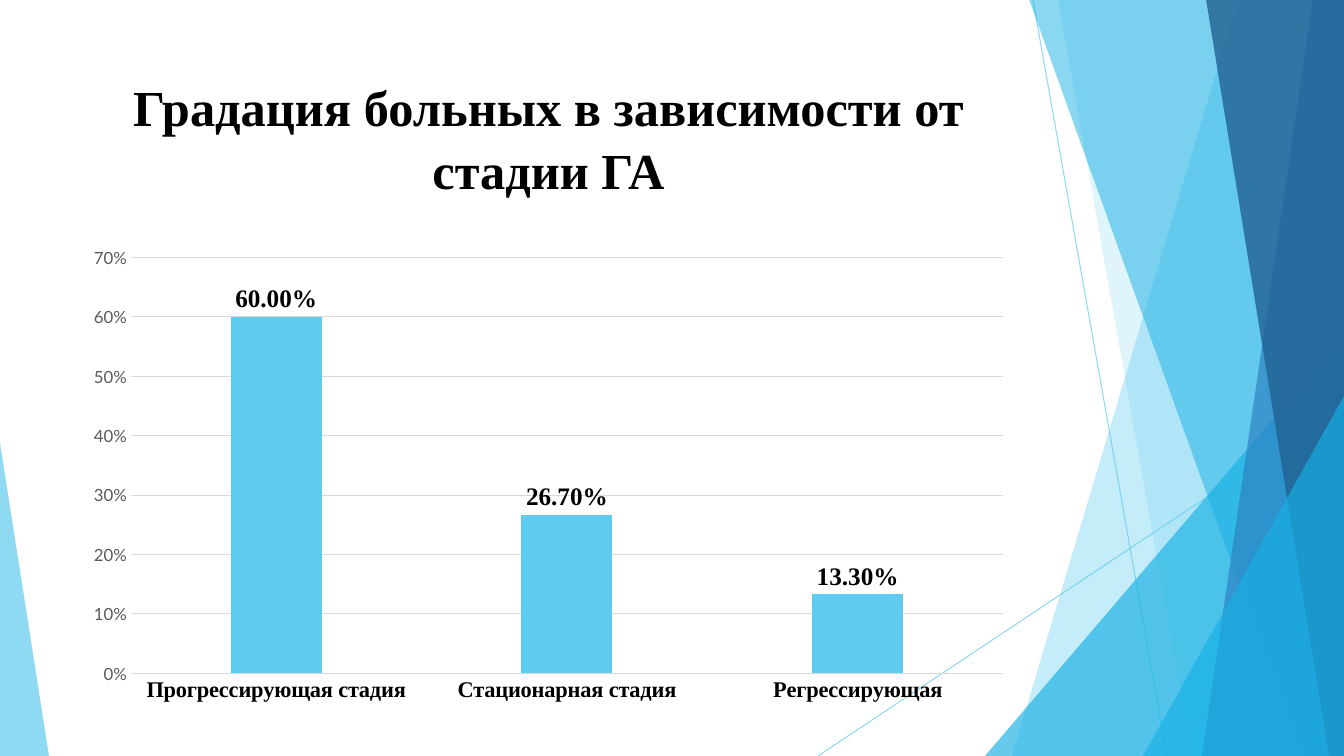
import pptx
import pptx.chart.data
import pptx.dml.color
import pptx.enum.chart
import pptx.enum.shapes
import pptx.enum.text
import pptx.oxml
import pptx.oxml.ns
import pptx.util

SLIDE = (1344, 756)
SCALE = 914400 / 100.8
SERIF, SANS = "Times New Roman", "Lato"
COLORS = {
    "sky": "5FCBEF", "azure": "17B0E4", "blue": "2E83C3", "navy": "226292",
    "black": "000000", "gray": "595959", "grid": "D9D9D9",
}

TITLE = "Градация больных в зависимости от стадии ГА"
TITLE_BOX = (75, 68, 947, 145)
CHART_BOX = (75, 238, 947, 474)
STAGES = {
    "Прогрессирующая стадия": 0.6,
    "Стационарная стадия": 0.267,
    "Регрессирующая": 0.133,
}

# From back to front; opacity in percent
RAYS = [((1033, 0), (1167, 756)), ((1344, 406), (818, 756))]
# Bands run to the right edge: top left x, bottom left x, colour, opacity
# Triangles: left, top, width, apex position, colour, opacity
DECOR = [
    ("band", 1238, 1012, "sky", 36),
    ("band", 1058, 1192, "sky", 20),
    ("triangle", 985, 336, 359, 1, "azure", 66),
    ("band", 1029, 1301, "azure", 50),
    ("band", 1313, 1202, "blue", 70),
    ("band", 1206, 1329, "navy", 80),
    ("triangle", 1143, 396, 201, 1, "azure", 66),
    ("triangle", 0, 443, 49, 0, "sky", 70),
]


def px(*lengths):
    return [pptx.util.Emu(round(length * SCALE)) for length in lengths]


def rgb(name):
    return pptx.dml.color.RGBColor.from_string(COLORS[name])


def set_opacity(shape, percent):
    for color in shape.element.iter(pptx.oxml.ns.qn("a:srgbClr")):
        pptx.oxml.ns.qn("a:alpha")
        alpha = color.makeelement(pptx.oxml.ns.qn("a:alpha"), {"val": str(percent * 1000)})
        color.append(alpha)


def paint(shape, color, opacity):
    shape.shadow.inherit = False
    shape.line.fill.background()
    shape.fill.solid()
    shape.fill.fore_color.rgb = rgb(color)
    set_opacity(shape, opacity)


def add_ray(page, start, end):
    ray = page.shapes.add_connector(
        pptx.enum.shapes.MSO_CONNECTOR.STRAIGHT, *px(*start, *end))
    ray.line.color.rgb = rgb("sky")
    ray.line.width = pptx.util.Pt(0.75)
    set_opacity(ray, 70)
    ray.element.spPr.append(
        ray.element.makeelement(pptx.oxml.ns.qn("a:effectLst"), {}))


def add_band(page, top_x, bottom_x, color, opacity):
    right, bottom = SLIDE
    builder = page.shapes.build_freeform(top_x, -1, scale=SCALE)
    builder.add_line_segments([(right, -1), (right, bottom), (bottom_x, bottom)])
    paint(builder.convert_to_shape(), color, opacity)


def add_triangle(page, left, top, width, apex, color, opacity):
    triangle = page.shapes.add_shape(
        pptx.enum.shapes.MSO_SHAPE.ISOSCELES_TRIANGLE,
        *px(left, top, width, SLIDE[1] - top))
    triangle.adjustments[0] = apex
    paint(triangle, color, opacity)


def style_font(font, size, color="black", bold=False, name=SERIF):
    font.size = pptx.util.Pt(size)
    font.bold = bold
    font.name = name
    font.color.rgb = rgb(color)


def add_text(page, text, place, size, spacing=1.0, **style):
    box = page.shapes.add_textbox(*px(*place))
    frame = box.text_frame
    frame.word_wrap = True
    frame.vertical_anchor = pptx.enum.text.MSO_ANCHOR.TOP
    para = frame.paragraphs[0]
    para.alignment = pptx.enum.text.PP_ALIGN.CENTER
    para.line_spacing = spacing
    span = para.add_run()
    span.text = text
    style_font(span.font, size, **style)


def add_stage_chart(page):
    data = pptx.chart.data.CategoryChartData(number_format="0.00%")
    data.categories = list(STAGES)
    data.add_series("Series 1", list(STAGES.values()))
    chart = page.shapes.add_chart(
        pptx.enum.chart.XL_CHART_TYPE.COLUMN_CLUSTERED, *px(*CHART_BOX), data).chart
    chart.has_legend = False
    chart.has_title = False
    style_font(chart.font, 10, name=SANS)

    plot = chart.plots[0]
    plot.vary_by_categories = False
    plot.gap_width = 219
    plot.overlap = -27
    columns = plot.series[0].format.fill
    columns.solid()
    columns.fore_color.rgb = rgb("sky")

    plot.has_data_labels = True
    labels = plot.data_labels
    labels.show_value = True
    labels.number_format = "0.00%"
    labels.number_format_is_linked = False
    labels.position = pptx.enum.chart.XL_LABEL_POSITION.OUTSIDE_END
    style_font(labels.font, 18, bold=True)

    stages, shares = chart.category_axis, chart.value_axis
    for axis in (stages, shares):
        axis.major_tick_mark = pptx.enum.chart.XL_TICK_MARK.NONE
        axis.minor_tick_mark = pptx.enum.chart.XL_TICK_MARK.NONE
    style_font(stages.tick_labels.font, 16, bold=True)
    style_font(shares.tick_labels.font, 12, color="gray", name=SANS)
    shares.minimum_scale, shares.maximum_scale, shares.major_unit = 0, 0.7, 0.1
    shares.tick_labels.number_format = "0%"
    shares.tick_labels.number_format_is_linked = False
    shares.format.line.fill.background()
    shares.has_major_gridlines = True
    for line in (stages.format.line, shares.major_gridlines.format.line):
        line.color.rgb = rgb("grid")
        line.width = pptx.util.Pt(0.75)


def main():
    deck = pptx.Presentation()
    deck.slide_width, deck.slide_height = px(*SLIDE)
    page = deck.slides.add_slide(deck.slide_layouts[6])
    for start, end in RAYS:
        add_ray(page, start, end)
    draw = {"band": add_band, "triangle": add_triangle}
    for kind, *details in DECOR:
        draw[kind](page, *details)
    add_text(page, TITLE, TITLE_BOX, 36, spacing=1.05, bold=True)
    add_stage_chart(page)
    deck.save("out.pptx")


if __name__ == "__main__":
    main()
